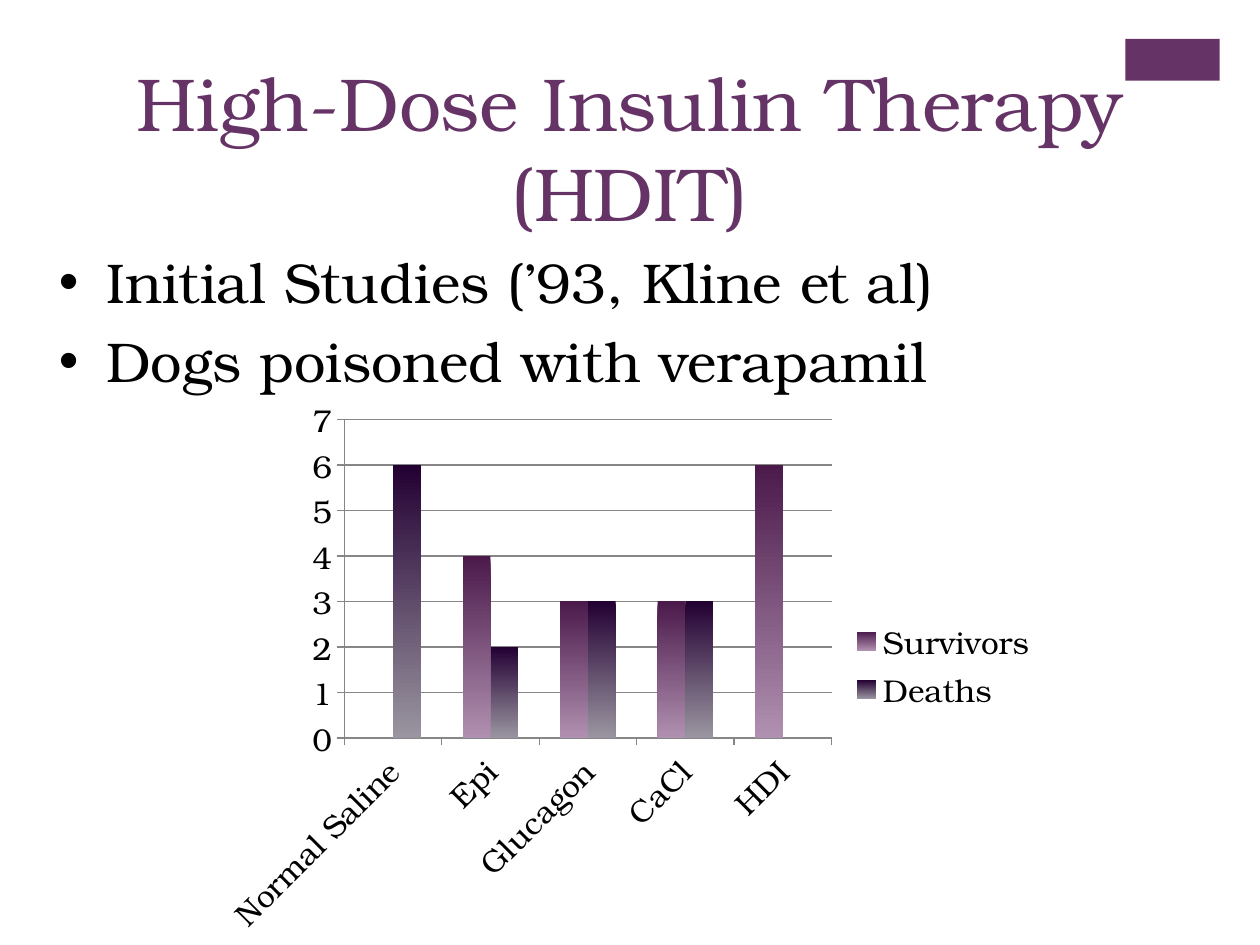
from dataclasses import dataclass
from lxml.etree import SubElement
from pptx import Presentation
from pptx.chart.data import CategoryChartData
from pptx.dml.color import RGBColor
from pptx.enum.chart import XL_CHART_TYPE, XL_LEGEND_POSITION, XL_TICK_MARK
from pptx.enum.shapes import MSO_SHAPE
from pptx.enum.text import MSO_ANCHOR, PP_ALIGN
from pptx.oxml.ns import qn
from pptx.util import Pt


@dataclass(frozen=True)
class Theme:
    face: str = "TeX Gyre Bonum"
    plum: str = "663366"
    ink: str = "000000"
    grid: str = "868686"
    fades: tuple = (("4B1A4B", "B090B0"), ("230033", "9A95A0"))
    title: float = 42.9
    body: float = 32
    chart: float = 18


LOOK = Theme()


def apply(item, form):
    for name, value in form.items():
        setattr(item, name, value)


def style(font, size, color):
    apply(font, {"name": LOOK.face, "size": Pt(size), "bold": False})
    font.color.rgb = RGBColor.from_string(color)


def add_tab(slide, box):
    tab = slide.shapes.add_shape(MSO_SHAPE.RECTANGLE, *map(Pt, box))
    tab.shadow.inherit = False
    tab.fill.solid()
    tab.fill.fore_color.rgb = RGBColor.from_string(LOOK.plum)
    tab.line.fill.background()


def add_text(slide, box, lines, size, color, frame_form, para_form):
    frame = slide.shapes.add_textbox(*map(Pt, box)).text_frame
    apply(frame, {"word_wrap": True, **frame_form})
    paras = []
    for i, line in enumerate(lines):
        para = frame.add_paragraph() if i else frame.paragraphs[0]
        para.text = line
        apply(para, para_form)
        for run in para.runs:
            style(run.font, size, color)
        paras.append(para)
    return paras


def add_dot(para, indent):
    props = para._p.get_or_add_pPr()
    props.set("marL", str(Pt(indent)))
    props.set("indent", str(-Pt(indent)))
    SubElement(props, qn("a:buFont"), typeface="Arial")
    SubElement(props, qn("a:buChar"), char="•")


def set_line(line):
    line.color.rgb = RGBColor.from_string(LOOK.grid)
    line.width = Pt(0.75)


def fade(series, colors):
    fill = series.format.fill
    fill.gradient()
    fill.gradient_angle = 270
    for stop, color in zip(fill.gradient_stops, colors):
        stop.color.rgb = RGBColor.from_string(color)


def place_plot(chart, form):
    area = chart._chartSpace.chart.plotArea
    for old in area.findall(qn("c:layout")):
        area.remove(old)
    layout = SubElement(area, qn("c:layout"))
    area.insert(0, layout)
    manual = SubElement(layout, qn("c:manualLayout"))
    for name, value in form.items():
        SubElement(manual, qn(f"c:{name}"), val=str(value))


def add_bars(slide, box, cats, rows):
    data = CategoryChartData()
    data.categories = cats
    for name, values in rows.items():
        data.add_series(name, values)
    chart = slide.shapes.add_chart(
        XL_CHART_TYPE.COLUMN_CLUSTERED, *map(Pt, box), data).chart
    apply(chart, {"has_title": False, "has_legend": True})
    style(chart.font, LOOK.chart, LOOK.ink)
    apply(chart.legend, {"position": XL_LEGEND_POSITION.RIGHT,
                         "include_in_layout": False})
    plot = chart.plots[0]
    apply(plot, {"gap_width": 150, "overlap": 0, "vary_by_categories": False})
    for series, colors in zip(plot.series, LOOK.fades):
        fade(series, colors)
    for axis in (chart.category_axis, chart.value_axis):
        apply(axis, {"major_tick_mark": XL_TICK_MARK.OUTSIDE,
                     "minor_tick_mark": XL_TICK_MARK.NONE})
        set_line(axis.format.line)
        style(axis.tick_labels.font, LOOK.chart, LOOK.ink)
    apply(chart.value_axis, {"minimum_scale": 0, "maximum_scale": 7,
                             "major_unit": 1, "has_major_gridlines": True})
    set_line(chart.value_axis.major_gridlines.format.line)
    turn = chart.category_axis._element.find(qn("c:txPr")).find(qn("a:bodyPr"))
    turn.set("rot", "-2700000")
    place_plot(chart, {"layoutTarget": "inner", "xMode": "edge",
                       "yMode": "edge", "x": 0.16, "y": 0.06,
                       "w": 0.58, "h": 0.57})


def main():
    deck = Presentation()
    apply(deck, {"slide_width": Pt(720), "slide_height": Pt(540)})
    slide = deck.slides.add_slide(deck.slide_layouts[6])
    add_tab(slide, (643, 22.3, 54, 23.8))
    add_text(slide, (63, 30, 594, 108), ["High-Dose Insulin Therapy\v(HDIT)"],
             LOOK.title, LOOK.plum, {"vertical_anchor": MSO_ANCHOR.MIDDLE},
             {"alignment": PP_ALIGN.CENTER})
    points = add_text(slide, (26.5, 138, 661, 366.5),
                      ["Initial Studies (’93, Kline et al)",
                       "Dogs poisoned with verapamil"],
                      LOOK.body, LOOK.ink, {"vertical_anchor": MSO_ANCHOR.TOP},
                      {"space_before": Pt(6.4)})
    for para in points:
        add_dot(para, 27)
    add_bars(slide, (120, 220.5, 480, 319.5),
             ["Normal Saline", "Epi", "Glucagon", "CaCl", "HDI"],
             {"Survivors": (0, 4, 3, 3, 6), "Deaths": (6, 2, 3, 3, 0)})
    deck.save("out.pptx")


if __name__ == "__main__":
    main()
